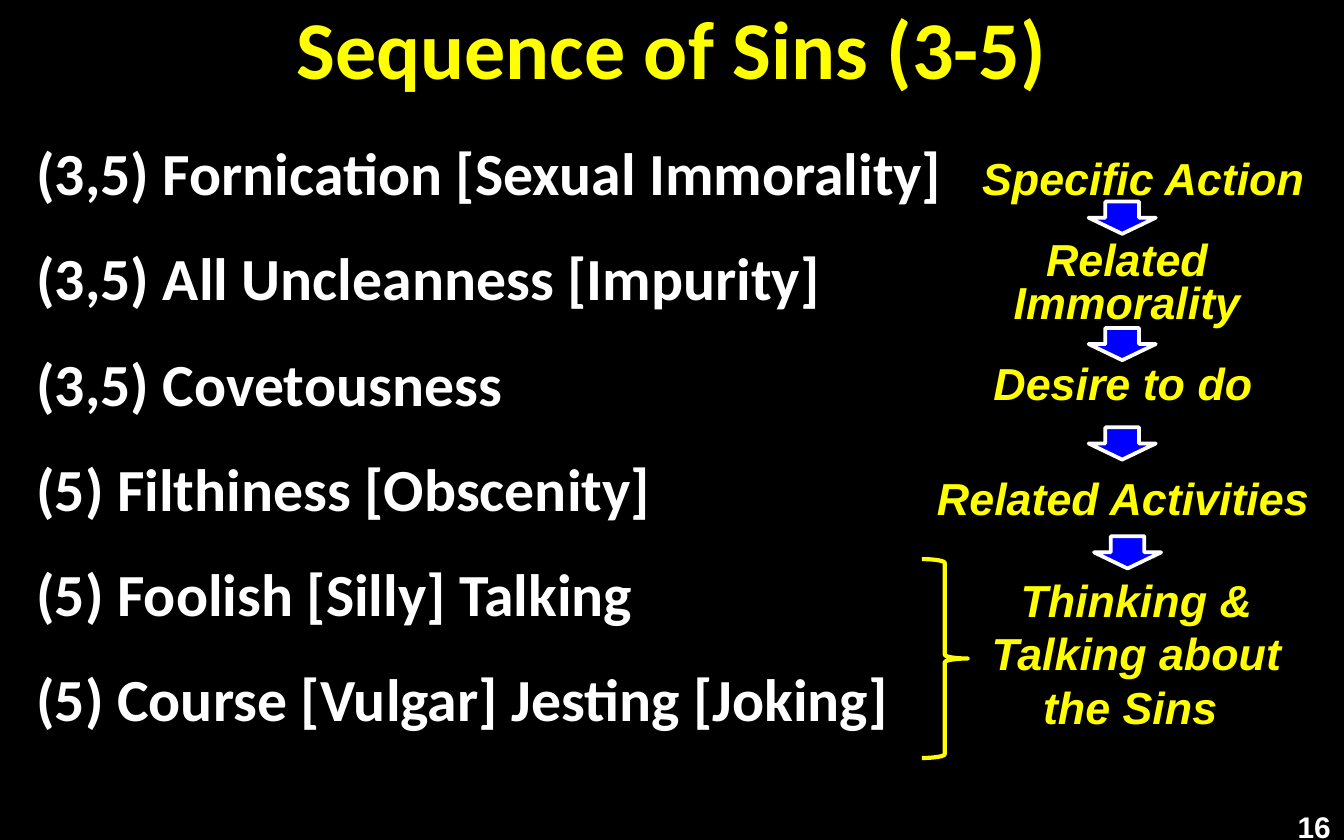
import pptx
import pptx.util
import pptx.dml.color
import pptx.enum.shapes
import pptx.enum.text
import pptx.oxml.xmlchemy

PX = 9144  # EMU per px, 100 px to the inch
YELLOW, WHITE, BLUE, BLACK = "FFFF00", "FFFFFF", "0000FF", "000000"
SHAPE = pptx.enum.shapes.MSO_SHAPE
ALIGN = pptx.enum.text.PP_ALIGN

SINS = [
    "(3,5) Fornication [Sexual Immorality]",
    "(3,5) All Uncleanness [Impurity]",
    "(3,5) Covetousness",
    "(5) Filthiness [Obscenity]",
    "(5) Foolish [Silly] Talking",
    "(5) Course [Vulgar] Jesting [Joking]",
]
# Step text, box relative to the flow column, line spacing
STEPS = [
    ("Specific Action", (40, 0, 267, 50), 1.0),
    ("Related Immorality", (24, 68, 275, 75), 0.8),
    ("Desire to do", (21, 153, 275, 50), 1.0),
    ("Related Activities", (0, 238, 317, 50), 1.0),
    ("Thinking & Talking about the Sins ", (31, 314, 275, 131), 1.0),
]
ARROWS = [(133, 43), (133, 137), (133, 211), (137, 292)]


def color(hex_value):
    return pptx.dml.color.RGBColor.from_string(hex_value)


def emu(*lengths):
    return [pptx.util.Emu(n * PX) for n in lengths]


def add_run(p, text, size, font, hex_value, italic=None):
    r = p.add_run()
    r.text = text
    r.font.size = pptx.util.Pt(size)
    r.font.name = font
    r.font.bold = True
    r.font.italic = italic
    r.font.color.rgb = color(hex_value)


def place(sp, box):
    sp.left, sp.top, sp.width, sp.height = emu(*box)
    sp.text_frame.auto_size = pptx.enum.text.MSO_AUTO_SIZE.NONE
    return sp.text_frame


def add_text(s, box, text, size, hex_value, align, italic=None, spacing=None):
    tf = s.shapes.add_textbox(*emu(*box)).text_frame
    tf.word_wrap = True
    p = tf.paragraphs[0]
    p.alignment = align
    p.line_spacing = spacing
    add_run(p, text, size, "Arial", hex_value, italic)


def add_outlined(s, kind, box, line, width, fill=None):
    sp = s.shapes.add_shape(kind, *emu(*box))
    sp.shadow.inherit = False
    if fill:
        sp.fill.solid()
        sp.fill.fore_color.rgb = color(fill)
    else:
        sp.fill.background()
    sp.line.color.rgb = color(line)
    sp.line.width = pptx.util.Pt(width)


def fill_title(s, box):
    tf = place(s.shapes.title, box)
    tf.vertical_anchor = pptx.enum.text.MSO_ANCHOR.MIDDLE
    p = tf.paragraphs[0]
    p.alignment = ALIGN.CENTER
    add_run(p, "Sequence of Sins (3-5)", 44, "Calibri", YELLOW)


def fill_sins(s, box):
    tf = place(s.placeholders[1], box)
    for i, text in enumerate(SINS):
        p = tf.add_paragraph() if i else tf.paragraphs[0]
        p.space_before = pptx.util.Pt(0)
        p.space_after = pptx.util.Pt(18)
        # No bullet, no hanging indent
        pPr = p._p.get_or_add_pPr()
        pPr.set("marL", "0")
        pPr.set("indent", "0")
        pPr.append(pptx.oxml.xmlchemy.OxmlElement("a:buNone"))
        add_run(p, text, 32, "Calibri", WHITE)


def add_flow(s, x, y):
    for text, (dx, dy, w, h), spacing in STEPS:
        add_text(s, (x + dx, y + dy, w, h), text, 24, YELLOW,
                 ALIGN.CENTER, True, spacing)
    for dx, dy in ARROWS:
        add_outlined(s, SHAPE.DOWN_ARROW, (x + dx, y + dy, 50, 24),
                     WHITE, 2, BLUE)
    # Brace joining the last two sins to the last step
    add_outlined(s, SHAPE.RIGHT_BRACE, (x + 9, y + 309, 34, 148), YELLOW, 2.25)


def main():
    prs = pptx.Presentation()
    prs.slide_width, prs.slide_height = emu(1000, 625)
    s = prs.slides.add_slide(prs.slide_layouts[1])
    s.background.fill.solid()
    s.background.fill.fore_color.rgb = color(BLACK)

    fill_title(s, (75, 7, 850, 56))
    fill_sins(s, (17, 96, 942, 493))
    add_flow(s, 677, 107)
    # Page number
    add_text(s, (950, 597, 50, 28), "16", 16, WHITE, ALIGN.RIGHT)
    prs.save("out.pptx")


if __name__ == "__main__":
    main()
